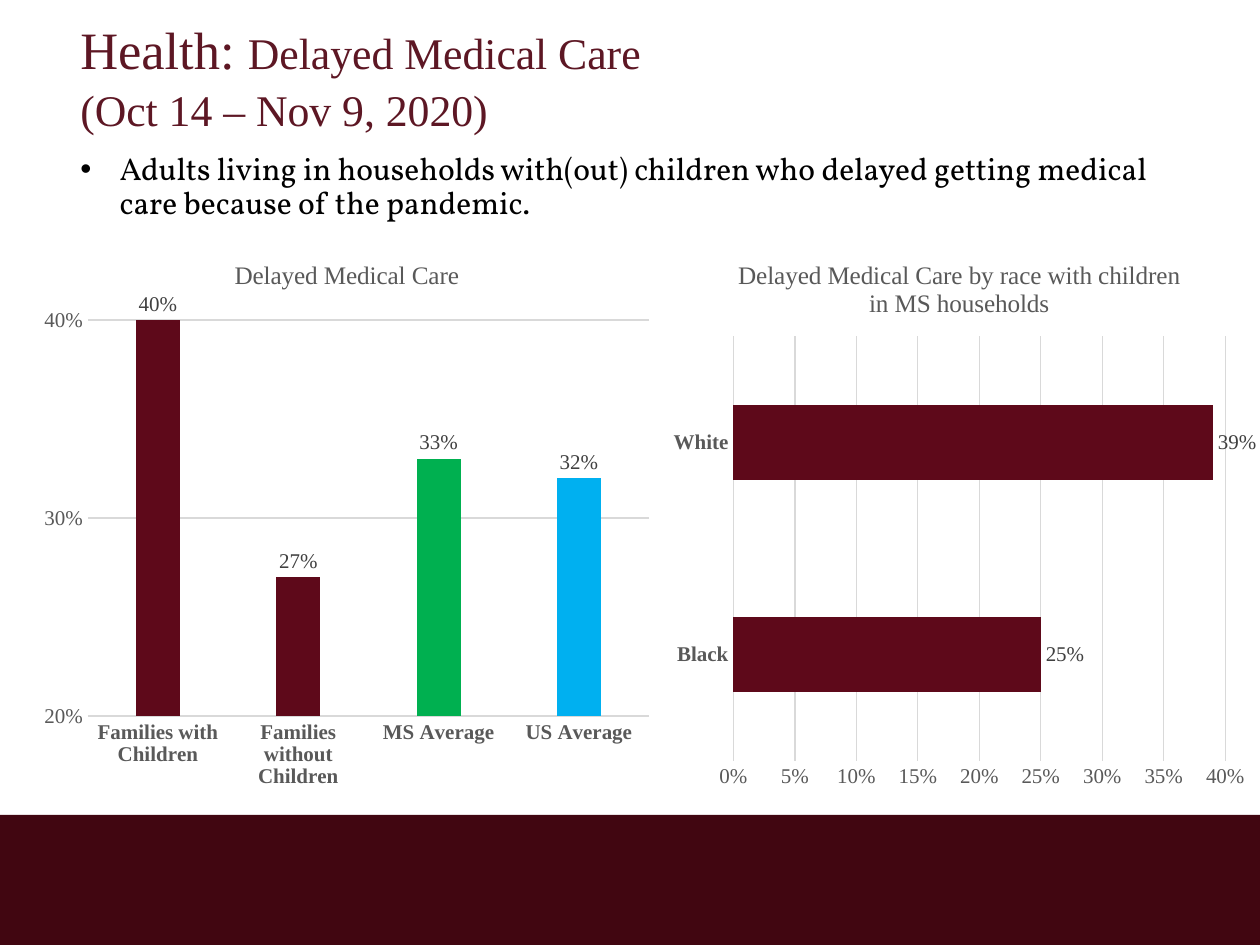
from lxml.etree import SubElement
from pptx import Presentation
from pptx.chart.data import CategoryChartData as Data
from pptx.dml.color import RGBColor
from pptx.enum.chart import XL_CHART_TYPE as Kind, XL_LABEL_POSITION as Pos, XL_TICK_MARK as Tick
from pptx.enum.shapes import MSO_SHAPE as Shape
from pptx.enum.text import MSO_AUTO_SIZE as Auto
from pptx.oxml.ns import qn
from pptx.util import Cm, Pt

WINE = RGBColor(0x41, 0x06, 0x11)
TITLE = RGBColor(0x5D, 0x17, 0x24)
BAR = RGBColor(0x5E, 0x09, 0x1A)
GREEN = RGBColor(0x00, 0xB0, 0x50)
BLUE = RGBColor(0x00, 0xB0, 0xF0)
BLACK = RGBColor(0, 0, 0)
DARK = RGBColor(0x40, 0x40, 0x40)
GRAY = RGBColor(0x59, 0x59, 0x59)
GRID = RGBColor(0xD9, 0xD9, 0xD9)
SERIF = "Times New Roman"


def style(font, size, color, name=SERIF, bold=False):
    font.size = Pt(size)
    font.color.rgb = color
    font.name = name
    font.bold = bold


deck = Presentation()
deck.slide_width, deck.slide_height = Cm(25.4), Cm(19.05)
slide = deck.slides.add_slide(deck.slide_layouts[6])

band = slide.shapes.add_shape(Shape.RECTANGLE, Cm(-0.05), Cm(16.43), Cm(25.45), Cm(2.62))
band.shadow.inherit = False
band.fill.solid()
band.fill.fore_color.rgb = WINE
band.line.fill.background()

head = slide.shapes.add_textbox(Cm(1.37), Cm(0.1), Cm(21.69), Cm(3.18)).text_frame
head.word_wrap = True
head.margin_top = Cm(0.25)
first = head.paragraphs[0]
second = head.add_paragraph()
second.space_before = Pt(1.5)
for para, text, size in [
    (first, "Health: ", 30),
    (first, "Delayed Medical Care", 25),
    (second, "(Oct 14 – Nov 9, 2020)", 25),
]:
    run = para.add_run()
    run.text = text
    style(run.font, size, TITLE)

body = slide.shapes.add_textbox(Cm(1.37), Cm(2.97), Cm(22.63), Cm(1.8)).text_frame
body.word_wrap = True
body.auto_size = Auto.SHAPE_TO_FIT_TEXT
body.text = "Adults living in households with(out) children who delayed getting medical care because of the pandemic."
para = body.paragraphs[0]
para.line_spacing = 0.9
props = para._p.get_or_add_pPr()
props.set("marL", str(Cm(0.79)))
props.set("indent", str(Cm(-0.79)))
SubElement(props, qn("a:buFont")).set("typeface", "Arial")
SubElement(props, qn("a:buChar")).set("char", "•")
style(para.runs[0].font, 18, BLACK, "Vollkorn")

charts = [
    (Kind.COLUMN_CLUSTERED, 0.64, 12.7, "Delayed Medical Care", "Delayed Medical Care",
     {"Families with Children": 0.4, "Families without Children": 0.27,
      "MS Average": 0.33, "US Average": 0.32},
     0.2, 0.1, 219, -27, {2: GREEN, 3: BLUE}),
    (Kind.BAR_CLUSTERED, 13.34, 11.99, "Delayed Medical Care by race with children in MS households", "Series 1",
     {"Black": 0.25, "White": 0.39}, 0, 0.05, 182, 0, {}),
]
for kind, left, width, title, name, vals, low, step, gap, lap, tints in charts:
    data = Data(number_format="0%")
    data.categories = list(vals)
    data.add_series(name, list(vals.values()))
    chart = slide.shapes.add_chart(kind, Cm(left), Cm(4.78), Cm(width), Cm(11.33), data).chart
    style(chart.font, 12, BLACK)
    chart.has_legend = False
    chart.has_title = True
    chart.chart_title.include_in_layout = False
    chart.chart_title.text_frame.text = title
    style(chart.chart_title.text_frame.paragraphs[0].runs[0].font, 14.4, GRAY)

    cats, axis = chart.category_axis, chart.value_axis
    for part in (cats, axis):
        part.major_tick_mark = part.minor_tick_mark = Tick.NONE
        style(part.tick_labels.font, 12, GRAY, bold=part is cats)
    axis.format.line.fill.background()
    axis.minimum_scale, axis.maximum_scale, axis.major_unit = low, 0.4, step
    axis.tick_labels.number_format = "0%"
    axis.tick_labels.number_format_is_linked = False
    axis.has_major_gridlines = True
    for line in (cats.format.line, axis.major_gridlines.format.line):
        line.color.rgb = GRID
        line.width = Pt(0.75)

    plot = chart.plots[0]
    plot.vary_by_categories = False
    plot.gap_width, plot.overlap = gap, lap
    bars = plot.series[0]
    bars.format.fill.solid()
    bars.format.fill.fore_color.rgb = BAR
    for spot, tint in tints.items():
        fill = bars.points[spot].format.fill
        fill.solid()
        fill.fore_color.rgb = tint
    labels = bars.data_labels
    labels.show_value = True
    labels.position = Pos.OUTSIDE_END
    labels.number_format = "0%"
    labels.number_format_is_linked = False
    style(labels.font, 12, DARK)

deck.save("out.pptx")
